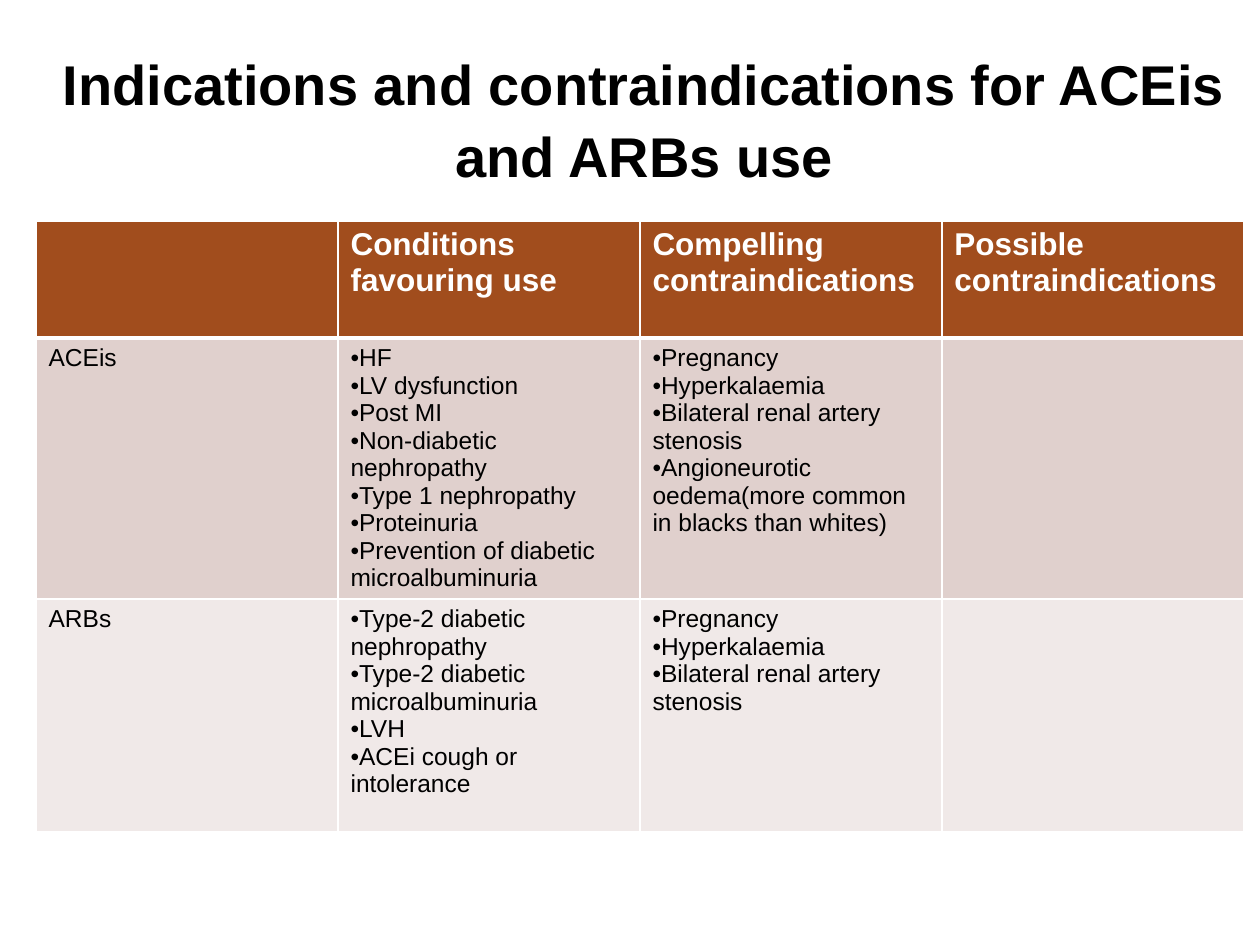
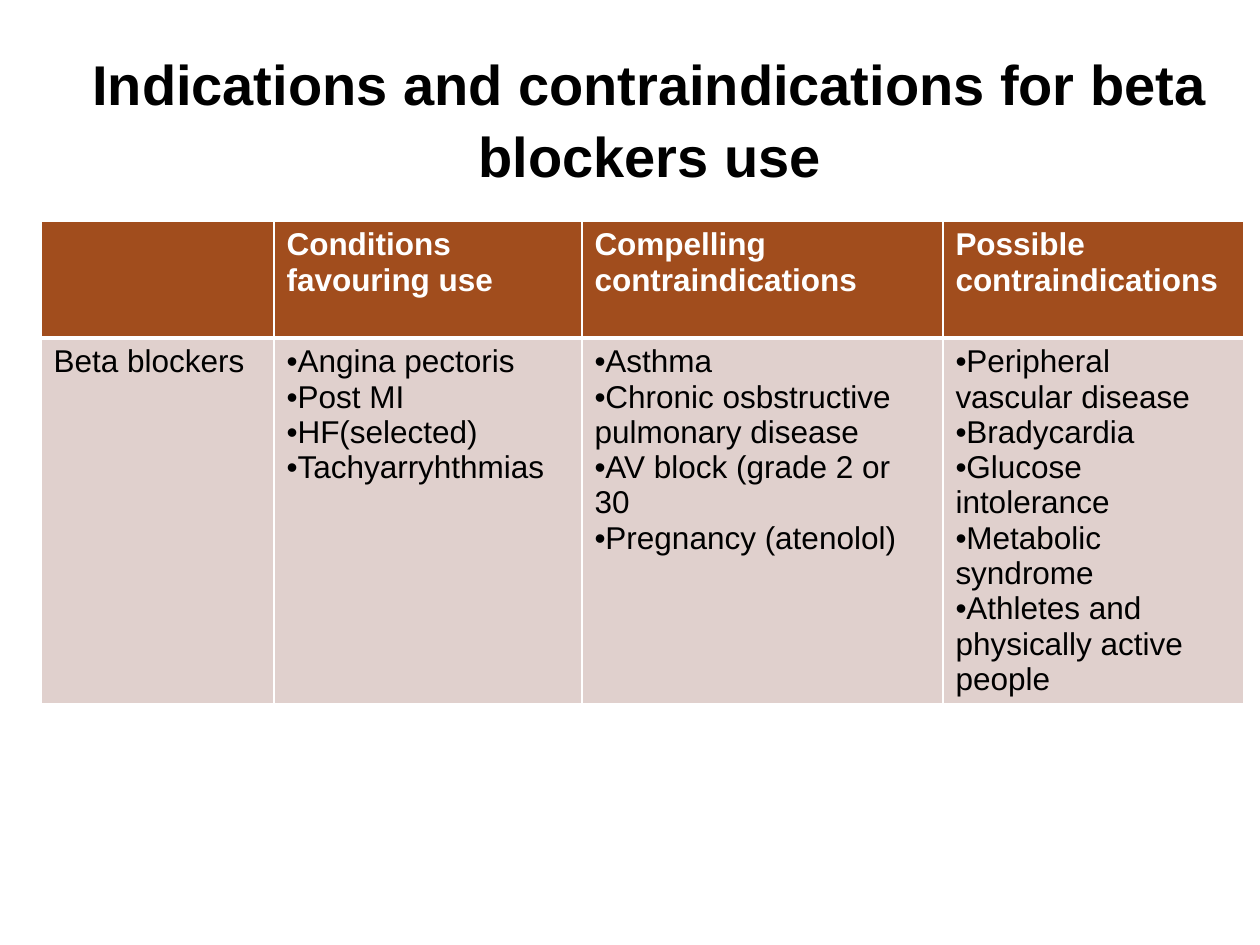
from lxml.etree import SubElement
from pptx import Presentation
from pptx.dml.color import RGBColor
from pptx.enum.text import MSO_ANCHOR as Anchor, MSO_AUTO_SIZE as AutoSize, PP_ALIGN as Align
from pptx.oxml.ns import qn
from pptx.util import Pt

PX = 914400 / 126  # EMU per px
BLACK = RGBColor(0x00, 0x00, 0x00)
WHITE = RGBColor(0xFF, 0xFF, 0xFF)
RUST = RGBColor(0xA1, 0x4D, 0x1D)
BANDS = (RGBColor(0xE0, 0xD0, 0xCD), RGBColor(0xF0, 0xE9, 0xE8))

TITLE_TOP, TITLE_HEIGHT = 38, 157
TABLE_TOP, HEADER_HEIGHT = 221, 117
HEADINGS = ("", "Conditions favouring use", "Compelling contraindications",
            "Possible contraindications")
SHARED_RISKS = ["Pregnancy", "Hyperkalaemia", "Bilateral renal artery stenosis"]


def px(length):
    return round(length * PX)


def write(frame, text, size=18, color=BLACK, bold=False, align=Align.LEFT, spacing=None):
    """Fill a text frame; a list of texts becomes bulleted paragraphs."""
    bulleted = isinstance(text, list)
    for index, line in enumerate(text if bulleted else [text]):
        paragraph = frame.paragraphs[0] if index == 0 else frame.add_paragraph()
        if bulleted:
            properties = paragraph._p.get_or_add_pPr()
            properties.set("marL", "0")
            properties.set("indent", "0")
            SubElement(properties, qn("a:buFont"), typeface="Arial")
            SubElement(properties, qn("a:buChar"), char="•")
        paragraph.alignment = align
        if spacing:
            paragraph.line_spacing = spacing
        run = paragraph.add_run()
        run.text = line
        font = run.font
        font.name, font.size, font.bold = "Arial", Pt(size), bold
        font.color.rgb = color


class Deck:
    def __init__(self):
        self.presentation = Presentation()
        self.presentation.slide_width = px(1260)
        self.presentation.slide_height = px(945)
        self.slide = None

    def add_slide(self, title, left, width):
        layout = self.presentation.slide_layouts[5]
        self.slide = self.presentation.slides.add_slide(layout)
        heading = self.slide.shapes.title
        heading.left, heading.top = px(left), px(TITLE_TOP)
        heading.width, heading.height = px(width), px(TITLE_HEIGHT)
        frame = heading.text_frame
        frame.auto_size, frame.vertical_anchor = AutoSize.NONE, Anchor.BOTTOM
        write(frame, title, size=32, bold=True, align=Align.CENTER, spacing=1.07)

    def add_cell(self, cell, text, fill, top=1, bottom=1, **text_format):
        """Style one cell; top and bottom are border widths in points."""
        properties = cell._tc.get_or_add_tcPr()
        for side, width in (("L", 1), ("R", 1), ("T", top), ("B", bottom)):
            line = SubElement(properties, qn(f"a:ln{side}"), w=str(Pt(width)))
            SubElement(SubElement(line, qn("a:solidFill")), qn("a:srgbClr"), val=str(WHITE))
        cell.fill.solid()
        cell.fill.fore_color.rgb = fill
        if text:
            write(cell.text_frame, text, **text_format)

    def add_drug_table(self, left, widths, drugs, heights, size):
        heights = [HEADER_HEIGHT, *heights]
        table = self.slide.shapes.add_table(
            len(heights), len(widths), px(left), px(TABLE_TOP),
            px(sum(widths)), px(sum(heights))).table
        for column, width in zip(table.columns, widths):
            column.width = px(width)
        for row, height in zip(table.rows, heights):
            row.height = px(height)
        for column, heading in enumerate(HEADINGS):
            self.add_cell(table.cell(0, column), heading, RUST, bottom=3,
                          color=WHITE, bold=True)
        for row, drug in enumerate(drugs, 1):
            for column, text in enumerate(drug):
                self.add_cell(table.cell(row, column), text, BANDS[(row - 1) % 2],
                              top=3 if row == 1 else 1, size=size)


def main():
    deck = Deck()

    deck.add_slide("Indications and contraindications for ACEis and ARBs use", 46, 1197)
    deck.add_drug_table(36, [302] * 4, [
        ("ACEis",
         ["HF", "LV dysfunction", "Post MI", "Non-diabetic nephropathy",
          "Type 1 nephropathy", "Proteinuria", "Prevention of diabetic microalbuminuria"],
         SHARED_RISKS + ["Angioneurotic oedema(more common in blacks than whites)"],
         ""),
        ("ARBs",
         ["Type-2 diabetic nephropathy", "Type-2 diabetic microalbuminuria", "LVH",
          "ACEi cough or intolerance"],
         SHARED_RISKS,
         ""),
    ], heights=[261, 233], size=14)

    deck.add_slide("Indications and contraindications for beta blockers use", 58, 1184)
    deck.add_drug_table(41, [233, 308, 361, 301], [
        ("Beta blockers",
         ["Angina pectoris", "Post MI", "HF(selected)", "Tachyarryhthmias"],
         ["Asthma", "Chronic osbstructive pulmonary disease", "AV block (grade 2 or 30",
          "Pregnancy (atenolol)"],
         ["Peripheral vascular disease", "Bradycardia", "Glucose intolerance",
          "Metabolic syndrome", "Athletes and physically active people"]),
    ], heights=[366], size=18)

    deck.presentation.save("out.pptx")


if __name__ == "__main__":
    main()
